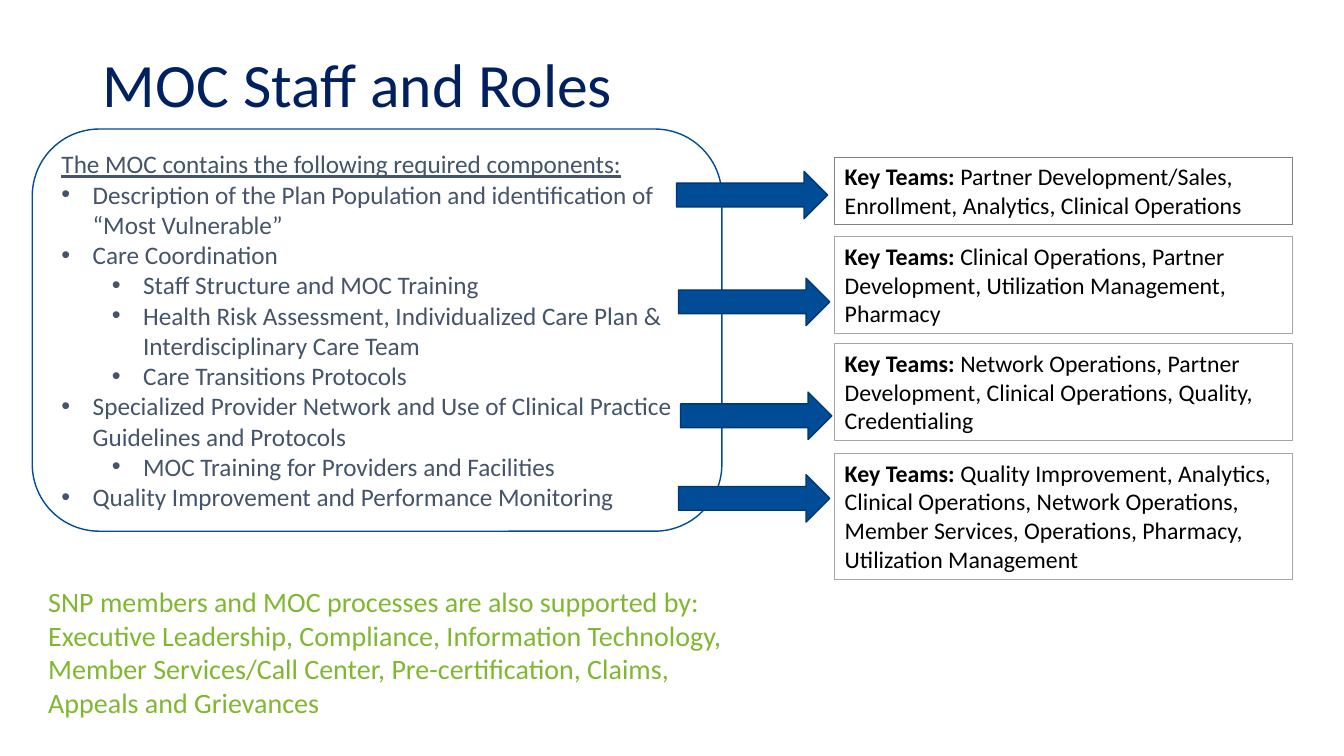
from dataclasses import dataclass

from lxml import etree
from pptx import Presentation, util as u
from pptx.dml.color import RGBColor
from pptx.enum import shapes, text
from pptx.oxml.ns import qn

PX = 9144


@dataclass(frozen=True)
class Theme:
    font: str = "Calibri"
    title: str = "002060"
    body: str = "44546A"
    accent: str = "004C97"
    accent_dark: str = "003870"
    green: str = "7FB82F"
    black: str = "000000"
    white: str = "FFFFFF"
    grey: str = "808080"
    light_grey: str = "A6A6A6"
    title_size: int = 44
    note_size: int = 20
    list_size: int = 18
    team_size: int = 17


class SlideBuilder:
    """Adds styled elements to one slide, with lengths in px (100 to the inch)."""

    def __init__(self, prs, theme):
        self.theme = theme
        self.s = prs.slides.add_slide(prs.slide_layouts[1])

    def style(self, r, size, color, bold=False, underline=False):
        r.font.name = self.theme.font
        r.font.size = u.Pt(size)
        r.font.color.rgb = RGBColor.from_string(color)
        r.font.bold = bold
        r.font.underline = underline

    def place(self, sp, box):
        sp.left, sp.top, sp.width, sp.height = (v * PX for v in box)

    def title(self, box, words):
        sp = self.s.shapes.title
        self.place(sp, box)
        tf = sp.text_frame
        tf.text = words
        tf.vertical_anchor = text.MSO_ANCHOR.MIDDLE
        p = tf.paragraphs[0]
        p.alignment = text.PP_ALIGN.LEFT
        p.line_spacing = 0.9
        self.style(p.runs[0], self.theme.title_size, self.theme.title)

    def bullets(self, box, heading, items):
        sp = self.s.placeholders[1]
        self.place(sp, box)
        tf = sp.text_frame
        tf.auto_size = text.MSO_AUTO_SIZE.NONE
        tf.vertical_anchor = text.MSO_ANCHOR.MIDDLE
        for i, (level, words) in enumerate([(None, heading)] + items):
            p = tf.paragraphs[0] if i == 0 else tf.add_paragraph()
            p.text = words
            p.level = level or 0
            p.space_before = u.Pt(0)
            pPr = p._p.get_or_add_pPr()
            if level is None:
                margin, indent = 0, 0
                etree.SubElement(pPr, qn("a:buNone"))
            else:
                margin, indent = 31 + 50 * level, -31
                etree.SubElement(pPr, qn("a:buFont"), typeface="Arial")
                etree.SubElement(pPr, qn("a:buChar"), char="•")
            pPr.set("marL", str(margin * PX))
            pPr.set("indent", str(indent * PX))
            self.style(p.runs[0], self.theme.list_size, self.theme.body,
                       underline=level is None)

    def shape(self, kind, box, line, width, fill=None):
        sp = self.s.shapes.add_shape(kind, *(v * PX for v in box))
        sp.shadow.inherit = False
        if fill:
            sp.fill.solid()
            sp.fill.fore_color.rgb = RGBColor.from_string(fill)
        else:
            sp.fill.background()
        sp.line.color.rgb = RGBColor.from_string(line)
        sp.line.width = u.Pt(width)
        return sp

    def frame(self, box):
        self.shape(shapes.MSO_SHAPE.ROUNDED_RECTANGLE, box, self.theme.accent, 1)

    def arrow(self, left, top):
        self.shape(shapes.MSO_SHAPE.RIGHT_ARROW, (left, top, 150, 47),
                   self.theme.accent_dark, 1, self.theme.accent)

    def text_box(self, box, line, words, size, color, label=""):
        sp = self.shape(shapes.MSO_SHAPE.RECTANGLE, box, line, 0.75)
        tf = sp.text_frame
        tf.word_wrap = True
        tf.auto_size = text.MSO_AUTO_SIZE.SHAPE_TO_FIT_TEXT
        tf.vertical_anchor = text.MSO_ANCHOR.TOP
        p = tf.paragraphs[0]
        p.alignment = text.PP_ALIGN.LEFT
        if label:
            p.text = label
            self.style(p.runs[0], size, color, bold=True)
        r = p.add_run()
        r.text = words
        self.style(r, size, color)

    def team(self, top, height, line, words):
        self.text_box((828, top, 454, height), line, words,
                      self.theme.team_size, self.theme.black, "Key Teams: ")


COMPONENTS = [
    (0, "Description of the Plan Population and identification of “Most Vulnerable”"),
    (0, "Care Coordination"),
    (1, "Staff Structure and MOC Training"),
    (1, "Health Risk Assessment, Individualized Care Plan & Interdisciplinary Care Team"),
    (1, "Care Transitions Protocols"),
    (0, "Specialized Provider Network and Use of Clinical Practice Guidelines and Protocols"),
    (1, "MOC Training for Providers and Facilities"),
    (0, "Quality Improvement and Performance Monitoring"),
]

THEME = Theme()

TEAMS = [
    ((671, 170), (156, 67), THEME.grey,
     "Partner Development/Sales, Enrollment, Analytics, Clinical Operations"),
    ((673, 276), (235, 96), THEME.light_grey,
     "Clinical Operations, Partner Development, Utilization Management, Pharmacy"),
    ((675, 389), (341, 96), THEME.light_grey,
     "Network Operations, Partner Development, Clinical Operations, Quality, "
     "Credentialing"),
    ((673, 471), (450, 125), THEME.light_grey,
     "Quality Improvement, Analytics, Clinical Operations, Network Operations, "
     "Member Services, Operations, Pharmacy, Utilization Management"),
]


def main():
    prs = Presentation()
    prs.slide_width, prs.slide_height = u.Inches(13.33), u.Inches(7.5)
    slide = SlideBuilder(prs, THEME)
    slide.title((92, 40, 1150, 93), "MOC Staff and Roles")
    slide.frame((32, 128, 684, 399))
    slide.bullets((51, 128, 646, 399),
                  "The MOC contains the following required components:", COMPONENTS)
    for arrow, (top, height), line, words in TEAMS:
        slide.arrow(*arrow)
        slide.team(top, height, line, words)
    slide.text_box((38, 575, 722, 145), THEME.white,
                   "SNP members and MOC processes are also supported by: Executive "
                   "Leadership, Compliance, Information Technology, Member Services/Call "
                   "Center, Pre-certification, Claims, Appeals and Grievances",
                   THEME.note_size, THEME.green)
    prs.save("out.pptx")


if __name__ == "__main__":
    main()
